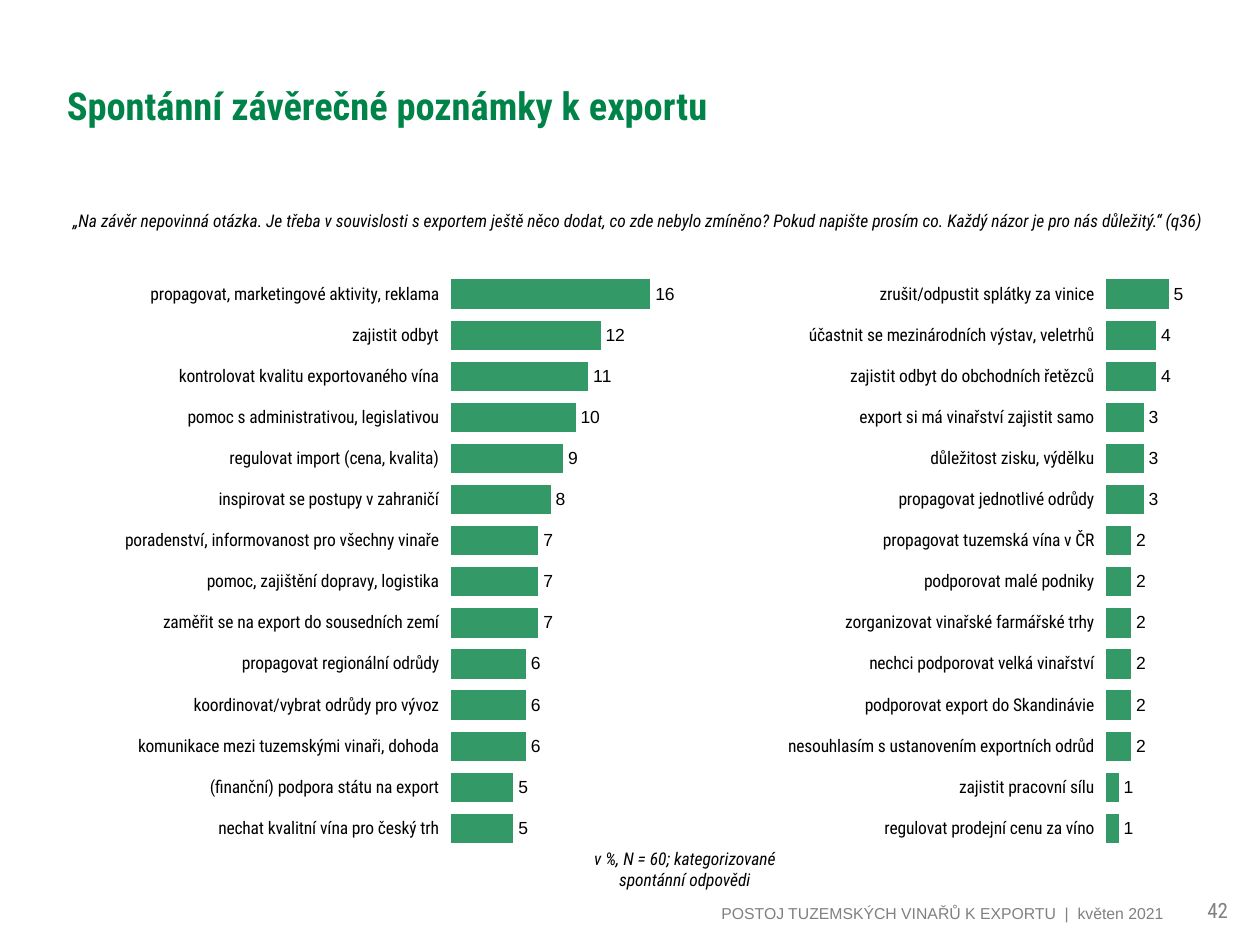
from dataclasses import dataclass

from lxml import etree
from pptx import Presentation
from pptx.chart.data import CategoryChartData
from pptx.dml.color import RGBColor
from pptx.enum.chart import XL_CHART_TYPE, XL_LABEL_POSITION, XL_TICK_LABEL_POSITION, XL_TICK_MARK
from pptx.enum.text import MSO_ANCHOR, MSO_AUTO_SIZE, PP_ALIGN
from pptx.oxml.ns import qn
from pptx.util import Pt

BAR = XL_CHART_TYPE.BAR_CLUSTERED
OUTSIDE_END = XL_LABEL_POSITION.OUTSIDE_END
NEXT_TO_AXIS = XL_TICK_LABEL_POSITION.NEXT_TO_AXIS
NO_TICK = XL_TICK_MARK.NONE
TICK_OUT = XL_TICK_MARK.OUTSIDE
TOP, MIDDLE, BOTTOM = MSO_ANCHOR.TOP, MSO_ANCHOR.MIDDLE, MSO_ANCHOR.BOTTOM
LEFT, CENTER, RIGHT = PP_ALIGN.LEFT, PP_ALIGN.CENTER, PP_ALIGN.RIGHT
FIT_TEXT, NO_FIT = MSO_AUTO_SIZE.SHAPE_TO_FIT_TEXT, MSO_AUTO_SIZE.NONE

CONDENSED = "Roboto Condensed"
SANS = "Arial"
BLACK, GRAY = "000000", "808080"
TITLE_GREEN, BAR_GREEN = "008348", "339966"

CHART_TOP, CHART_WIDTH, CHART_HEIGHT = 146.9, 453.6, 349.9
PLOT_AREA = {"x": 0.5, "y": 0.027, "w": 0.314, "h": 0.94}
AXIS_MAXIMUM = 20


@dataclass
class Caption:
    text: str
    left: float
    top: float
    width: float
    height: float
    size: float
    font: str = CONDENSED
    color: str = BLACK
    bold: bool = False
    italic: bool = False
    align: PP_ALIGN = LEFT
    anchor: MSO_ANCHOR = TOP
    fit: MSO_AUTO_SIZE = NO_FIT
    line_spacing: float = 1.0


@dataclass
class AnswerChart:
    left: float
    answers: list[tuple[str, int]]


TITLE = Caption("Spontánní závěrečné poznámky k exportu", 31, 15.1, 516.2, 90, 22,
                color=TITLE_GREEN, bold=True, anchor=MIDDLE)

CAPTIONS = [
    Caption("POSTOJ TUZEMSKÝCH VINAŘŮ K EXPORTU  |  květen 2021", 35.3, 502.6, 636.5, 28.1, 9,
            font=SANS, color=GRAY, align=RIGHT, anchor=BOTTOM),
    Caption("42", 671.8, 502.6, 48.2, 28.1, 12, color=GRAY, align=CENTER, anchor=BOTTOM),
    Caption("„Na závěr nepovinná otázka. Je třeba v souvislosti s exportem ještě něco dodat, "
            "co zde nebylo zmíněno? Pokud napište prosím co. Každý názor je pro nás důležitý.“ (q36)",
            34.6, 118.1, 668.9, 28.8, 10, italic=True, fit=FIT_TEXT, line_spacing=0.9),
    Caption("v %, N = 60; kategorizované spontánní odpovědi", 320.4, 481, 141.8, 31.7, 10,
            italic=True, align=CENTER, fit=FIT_TEXT),
]

CHARTS = [
    AnswerChart(31, [
        ("propagovat, marketingové aktivity, reklama", 16),
        ("zajistit odbyt", 12),
        ("kontrolovat kvalitu exportovaného vína", 11),
        ("pomoc s administrativou, legislativou", 10),
        ("regulovat import (cena, kvalita)", 9),
        ("inspirovat se postupy v zahraničí", 8),
        ("poradenství, informovanost pro všechny vinaře", 7),
        ("pomoc, zajištění dopravy, logistika", 7),
        ("zaměřit se na export do sousedních zemí", 7),
        ("propagovat regionální odrůdy", 6),
        ("koordinovat/vybrat odrůdy pro vývoz", 6),
        ("komunikace mezi tuzemskými vinaři, dohoda", 6),
        ("(finanční) podpora státu na export", 5),
        ("nechat kvalitní vína pro český trh", 5),
    ]),
    AnswerChart(405.4, [
        ("zrušit/odpustit splátky za vinice", 5),
        ("účastnit se mezinárodních výstav, veletrhů", 4),
        ("zajistit odbyt do obchodních řetězců", 4),
        ("export si má vinařství zajistit samo", 3),
        ("důležitost zisku, výdělku", 3),
        ("propagovat jednotlivé odrůdy", 3),
        ("propagovat tuzemská vína v ČR", 2),
        ("podporovat malé podniky", 2),
        ("zorganizovat vinařské farmářské trhy", 2),
        ("nechci podporovat velká vinařství", 2),
        ("podporovat export do Skandinávie", 2),
        ("nesouhlasím s ustanovením exportních odrůd", 2),
        ("zajistit pracovní sílu", 1),
        ("regulovat prodejní cenu za víno", 1),
    ]),
]


def rgb(color: str) -> RGBColor:
    return RGBColor.from_string(color)


def style_font(font, name: str, size: float, color: str, bold: bool = False, italic: bool = False) -> None:
    font.name = name
    font.size = Pt(size)
    font.bold = bold
    font.italic = italic
    font.color.rgb = rgb(color)


def write_caption(box, caption: Caption) -> None:
    frame = box.text_frame
    frame.word_wrap = True
    frame.auto_size = caption.fit
    frame.vertical_anchor = caption.anchor
    para = frame.paragraphs[0]
    para.alignment = caption.align
    para.line_spacing = caption.line_spacing
    span = para.add_run()
    span.text = caption.text
    style_font(span.font, caption.font, caption.size, caption.color, caption.bold, caption.italic)


def add_title(page, caption: Caption) -> None:
    box = page.shapes.title
    box.left, box.top = Pt(caption.left), Pt(caption.top)
    box.width, box.height = Pt(caption.width), Pt(caption.height)
    write_caption(box, caption)


def add_caption(page, caption: Caption) -> None:
    box = page.shapes.add_textbox(Pt(caption.left), Pt(caption.top), Pt(caption.width), Pt(caption.height))
    write_caption(box, caption)


def place_plot_area(chart) -> None:
    plot_area = chart.plots[0]._element.getparent()
    for old_layout in plot_area.findall(qn("c:layout")):
        plot_area.remove(old_layout)
    layout = etree.Element(qn("c:layout"))
    manual = etree.SubElement(layout, qn("c:manualLayout"))
    settings = {"layoutTarget": "inner", "xMode": "edge", "yMode": "edge", **PLOT_AREA}
    for tag, value in settings.items():
        etree.SubElement(manual, qn(f"c:{tag}")).set("val", str(value))
    plot_area.insert(0, layout)


def add_answer_chart(page, answer_chart: AnswerChart) -> None:
    data = CategoryChartData(number_format="0")
    data.categories = [answer for answer, _ in answer_chart.answers]
    data.add_series("Series 1", [share for _, share in answer_chart.answers])
    chart = page.shapes.add_chart(BAR, Pt(answer_chart.left), Pt(CHART_TOP),
                                  Pt(CHART_WIDTH), Pt(CHART_HEIGHT), data).chart
    chart.has_legend = False
    chart.has_title = False
    style_font(chart.font, SANS, 7.4, BLACK, bold=True)

    answer_axis = chart.category_axis
    answer_axis.reverse_order = True
    answer_axis.major_tick_mark = TICK_OUT
    answer_axis.minor_tick_mark = NO_TICK
    answer_axis.tick_label_position = NEXT_TO_AXIS
    answer_axis.format.line.fill.background()
    style_font(answer_axis.tick_labels.font, CONDENSED, 10, BLACK)

    share_axis = chart.value_axis
    share_axis.minimum_scale = 0
    share_axis.maximum_scale = AXIS_MAXIMUM
    share_axis.major_unit = AXIS_MAXIMUM
    share_axis.has_major_gridlines = False
    share_axis.visible = False

    plot = chart.plots[0]
    plot.gap_width = 40
    plot.vary_by_categories = False
    bars = plot.series[0]
    bars.format.fill.solid()
    bars.format.fill.fore_color.rgb = rgb(BAR_GREEN)
    labels = bars.data_labels
    labels.show_value = True
    labels.position = OUTSIDE_END
    labels.number_format = "0"
    labels.number_format_is_linked = False
    style_font(labels.font, SANS, 10, BLACK)
    place_plot_area(chart)


def main() -> None:
    deck = Presentation()
    deck.slide_width, deck.slide_height = Pt(720), Pt(540)
    page = deck.slides.add_slide(deck.slide_layouts.get_by_name("Title Only"))
    add_title(page, TITLE)
    for answer_chart in CHARTS:
        add_answer_chart(page, answer_chart)
    for caption in CAPTIONS:
        add_caption(page, caption)
    deck.save("out.pptx")


if __name__ == "__main__":
    main()
